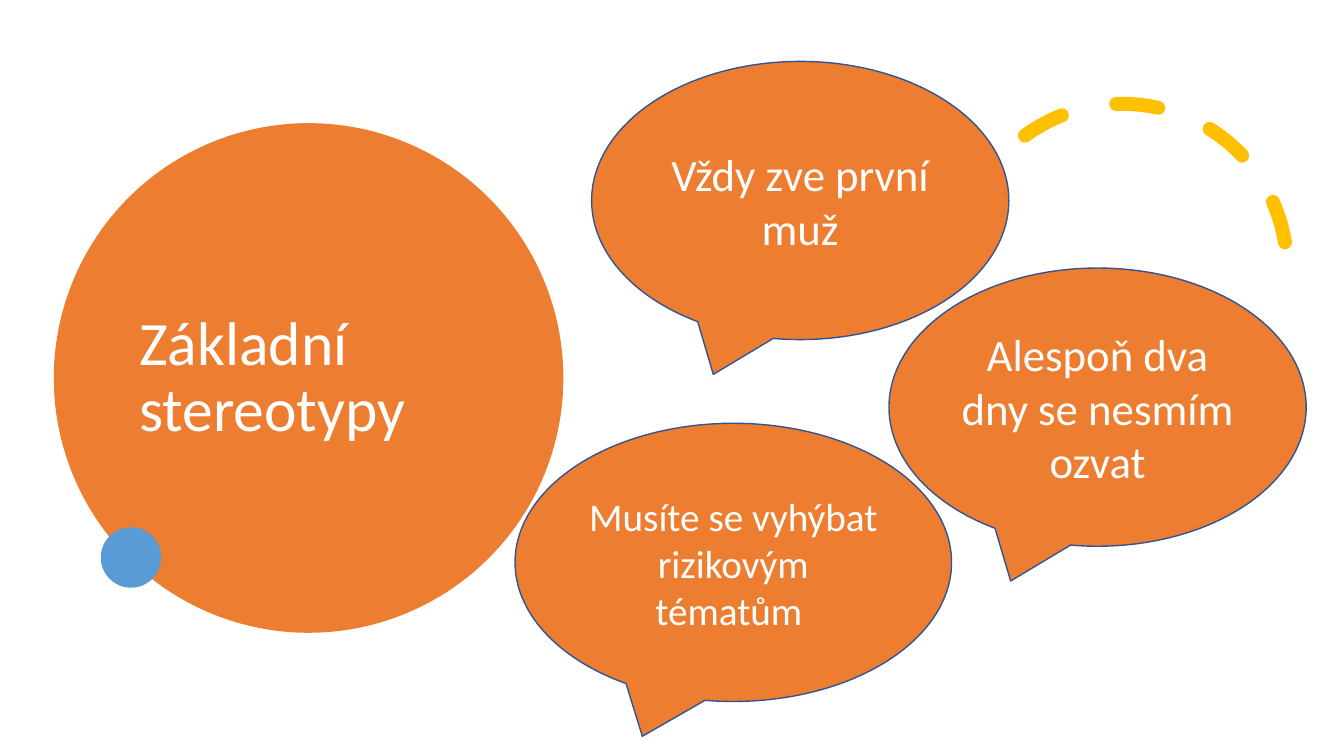
from pptx import Presentation
from pptx.dml.color import RGBColor
from pptx.enum.dml import MSO_LINE
from pptx.enum.shapes import MSO_SHAPE
from pptx.enum.text import MSO_ANCHOR, PP_ALIGN
from pptx.util import Pt

COLORS = {
    "orange": "ED7D31",
    "blue": "5B9BD5",
    "gold": "FFC000",
    "outline": "325491",
    "white": "FFFFFF",
}


def add_figure(kind, left, top, width, height, fill=None):
    figure = slide.shapes.add_shape(kind, Pt(left), Pt(top), Pt(width), Pt(height))
    figure.shadow.inherit = False
    if fill:
        figure.fill.solid()
        figure.fill.fore_color.rgb = RGBColor.from_string(COLORS[fill])
    else:
        figure.fill.background()
    figure.line.fill.background()
    return figure


def write_text(frame, text, size, align):
    frame.word_wrap = True
    frame.vertical_anchor = MSO_ANCHOR.MIDDLE
    paragraph = frame.paragraphs[0]
    paragraph.text = text
    paragraph.alignment = align
    paragraph.font.name = "Calibri"
    paragraph.font.size = Pt(size)
    paragraph.font.color.rgb = RGBColor.from_string(COLORS["white"])
    return paragraph


prs = Presentation()
prs.slide_width = Pt(960)
prs.slide_height = Pt(540)
slide = prs.slides.add_slide(prs.slide_layouts[6])

add_figure(MSO_SHAPE.OVAL, 38.4, 88, 364, 364, "orange")

title = slide.shapes.add_textbox(Pt(92.4), Pt(110.2), Pt(255), Pt(320.4))
heading = write_text(title.text_frame, "Základní stereotypy", 44, PP_ALIGN.LEFT)
heading.line_spacing = 0.9

dashed_arc = add_figure(MSO_SHAPE.ARC, 684, 74.2, 235.4, 235.4)
dashed_arc.rotation = 330.2
dashed_arc.adjustments[0] = 158.17
dashed_arc.adjustments[1] = 17.81
dashed_arc.line.color.rgb = RGBColor.from_string(COLORS["gold"])
dashed_arc.line.width = Pt(10)
dashed_arc.line.dash_style = MSO_LINE.DASH
dashed_arc.line.fill._xPr.set("cap", "rnd")

add_figure(MSO_SHAPE.OVAL, 72, 376.6, 43.2, 43.2, "blue")

stereotypes = [
    ("Vždy zve první muž", 422.6, 43.9, 298, 32),
    ("Musíte se vyhýbat rizikovým tématům ", 367.9, 302.4, 311.8, 28),
    ("Alespoň dva dny se nesmím ozvat", 635, 191.5, 298, 32),
]
for text, left, top, width, size in stereotypes:
    bubble = add_figure(MSO_SHAPE.OVAL_CALLOUT, left, top, width, 198.7, "orange")
    bubble.line.color.rgb = RGBColor.from_string(COLORS["outline"])
    bubble.line.width = Pt(1)
    write_text(bubble.text_frame, text, size, PP_ALIGN.CENTER)

prs.save("out.pptx")
